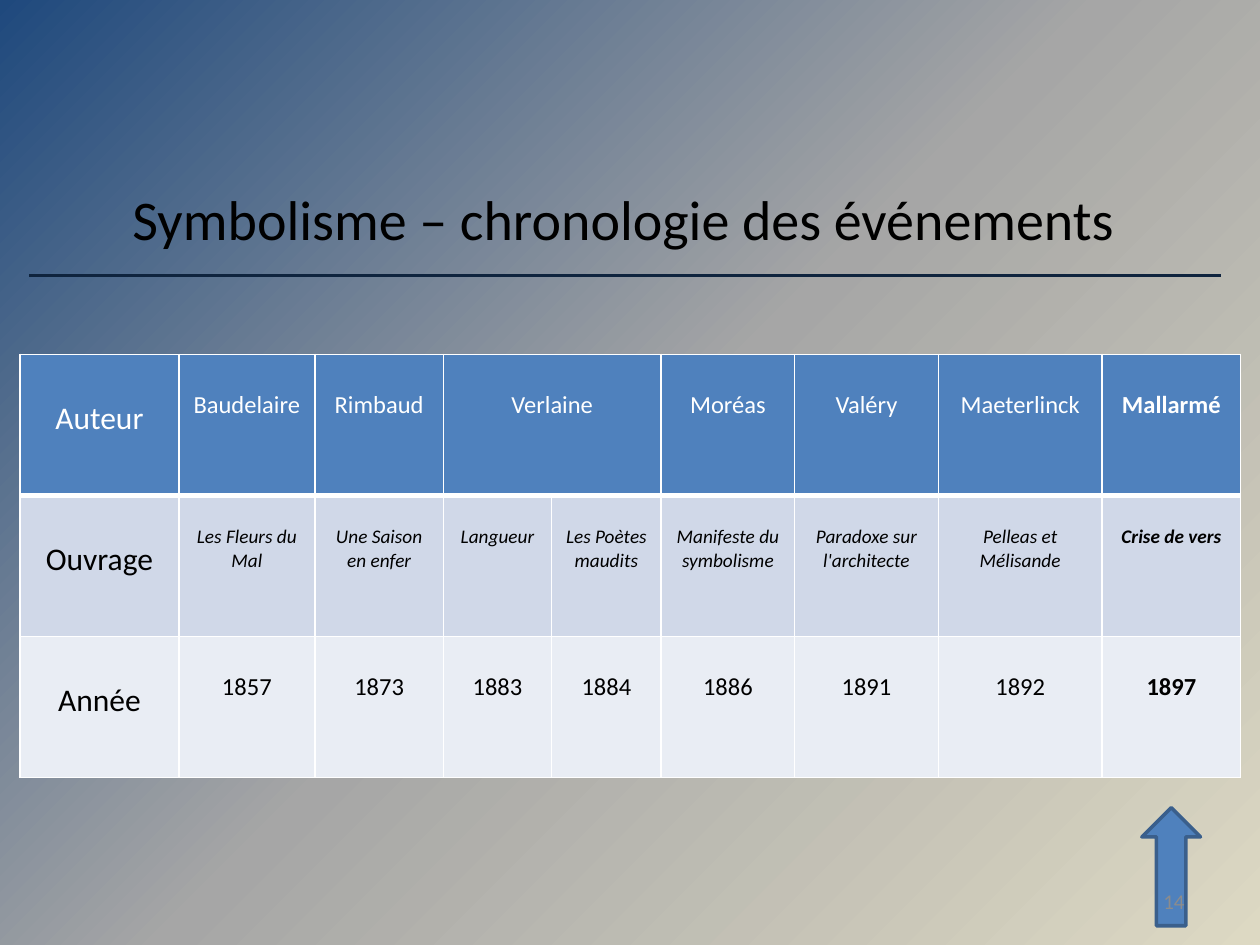
from lxml import etree
from pptx import Presentation
from pptx.dml.color import RGBColor
from pptx.enum import shapes, text
from pptx.oxml import ns
from pptx.util import Pt

WIDTHS = [90.7, 77.8, 73.4, 61.9, 62.6, 76.3, 82.1, 93.6, 79.2]
ROW = 80.6
ROWS = [
    ["Auteur", "Baudelaire", "Rimbaud", "Verlaine", "", "Moréas",
     "Valéry", "Maeterlinck", "Mallarmé"],
    ["Ouvrage", "Les Fleurs du Mal", "Une Saison en enfer", "Langueur",
     "Les Poètes maudits", "Manifeste du symbolisme",
     "Paradoxe sur l'architecte", "Pelleas et Mélisande", "Crise de vers"],
    ["Année", "1857", "1873", "1883", "1884", "1886", "1891", "1892", "1897"],
]
# fill, font colour, text size, italic
STYLES = [("4F81BD", "FFFFFF", 14, False),
          ("D0D8E8", "000000", 11, True),
          ("E9EDF4", "000000", 14, False)]


def rgb(hex):
    return RGBColor.from_string(hex)


def box(*nums):
    return [Pt(n) for n in nums]


def node(parent, tag, **attrs):
    """Add an XML child such as a:ln and return it."""
    return etree.SubElement(parent, ns.qn(tag), attrs)


def style(frame, size, color, align, bold=False, italic=False):
    for para in frame.paragraphs:
        para.alignment = align
        for run in para.runs:
            font = run.font
            font.name, font.size = "Calibri", Pt(size)
            font.bold, font.italic = bold, italic
            font.color.rgb = rgb(color)


def paint(slide, stops, angle):
    """Give the background a linear gradient."""
    fill = slide.background.fill
    fill.gradient()
    grad = slide.element.find(".//" + ns.qn("a:gradFill"))
    for child in list(grad):
        grad.remove(child)
    items = node(grad, "a:gsLst")
    for pos, color in stops:
        stop = node(items, "a:gs", pos=str(pos * 1000))
        node(stop, "a:srgbClr", val=color)
    node(grad, "a:lin", ang=str(angle * 60000), scaled="0")


def label(slide, words, place, size, color, align, wrap=True):
    frame = slide.shapes.add_textbox(*box(*place)).text_frame
    frame.word_wrap = wrap
    frame.vertical_anchor = text.MSO_ANCHOR.MIDDLE
    frame.text = words
    style(frame, size, color, align)


def rule(slide, start, end, color, width):
    line = slide.shapes.add_connector(
        shapes.MSO_CONNECTOR.STRAIGHT, *box(*start, *end))
    line.line.color.rgb = rgb(color)
    line.line.width = Pt(width)
    node(line.element.spPr, "a:effectLst")


def edge(cell, head):
    """Draw white borders, thicker below the header."""
    props = cell._tc.get_or_add_tcPr()
    for side in "LRTB":
        width = 3 if head and side == "B" else 1
        line = node(props, "a:ln" + side, w=str(Pt(width)))
        node(node(line, "a:solidFill"), "a:srgbClr", val="FFFFFF")


def grid(slide, left, top):
    table = slide.shapes.add_table(
        len(ROWS), len(WIDTHS),
        *box(left, top, sum(WIDTHS), ROW * len(ROWS))).table
    for col, width in zip(table.columns, WIDTHS):
        col.width = Pt(width)
    for r, (words, (fill, color, base, italic)) in enumerate(zip(ROWS, STYLES)):
        table.rows[r].height = Pt(ROW)
        for c, word in enumerate(words):
            cell = table.cell(r, c)
            size = base if c else 18
            cell.text = word
            cell.margin_top = Pt(3.6 + 1.22 * size)  # one line of space above
            edge(cell, r == 0)
            cell.fill.solid()
            cell.fill.fore_color.rgb = rgb(fill)
            style(cell.text_frame, size, color, text.PP_ALIGN.CENTER,
                  c == len(words) - 1, italic and c > 0)
    table.cell(0, 3).merge(table.cell(0, 4))


def arrow(slide, place, fill, line):
    shape = slide.shapes.add_shape(shapes.MSO_SHAPE.UP_ARROW, *box(*place))
    shape.shadow.inherit = False
    shape.fill.solid()
    shape.fill.fore_color.rgb = rgb(fill)
    shape.line.color.rgb = rgb(line)
    shape.line.width = Pt(2)


def main():
    deck = Presentation()
    deck.slide_width, deck.slide_height = box(720, 540)
    slide = deck.slides.add_slide(deck.slide_layouts[6])
    paint(slide, [(0, "1F497D"), (50, "A6A6A6"), (100, "DDD9C3")], 45)
    label(slide, "Symbolisme – chronologie des événements ",
          (65.5, 101.5, 589, 46), 32, "000000", text.PP_ALIGN.CENTER, False)
    rule(slide, (16.6, 157.5), (697.7, 157.5), "0F243E", 1.75)
    grid(slide, 11.5, 202.5)
    arrow(slide, (652.5, 461.5, 33.5, 67.5), "4F81BD", "3A5F8C")
    label(slide, "14", (516, 500.5, 168, 28.75), 12, "8C8C8C",
          text.PP_ALIGN.RIGHT)
    deck.save("out.pptx")


if __name__ == "__main__":
    main()
